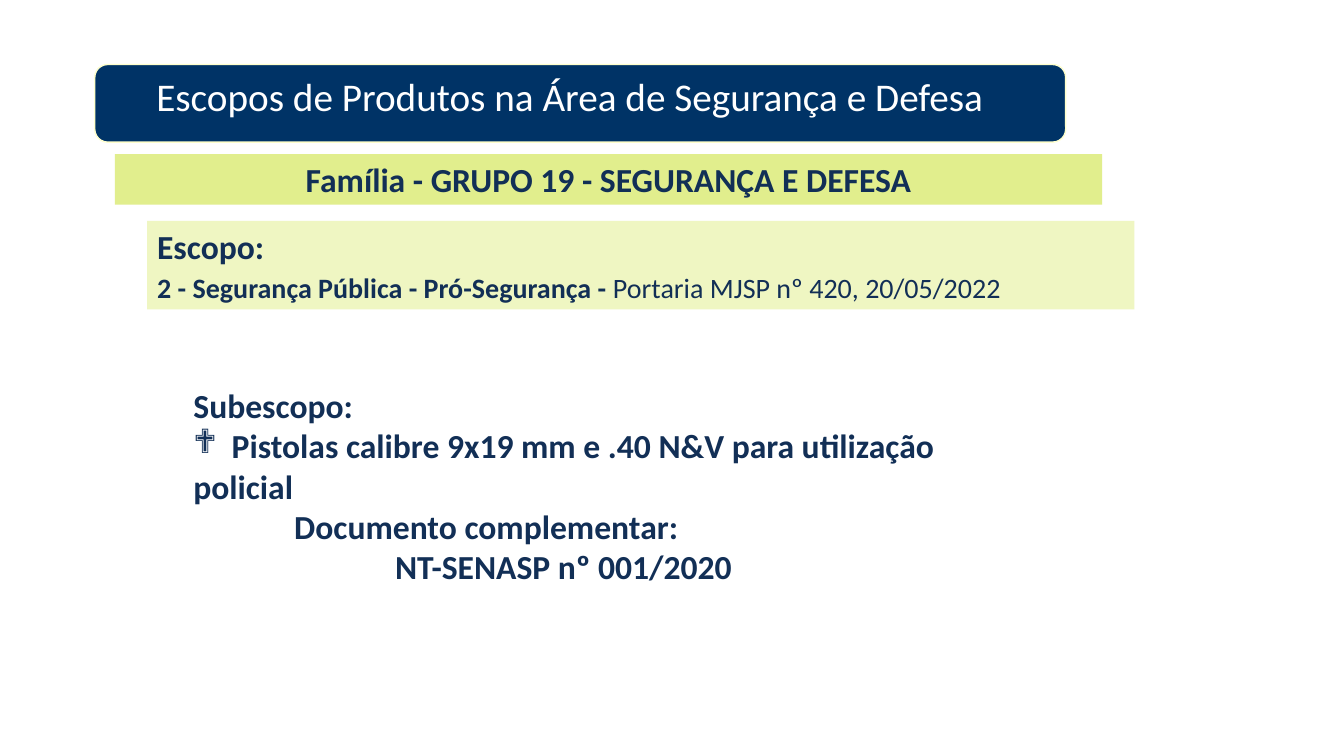
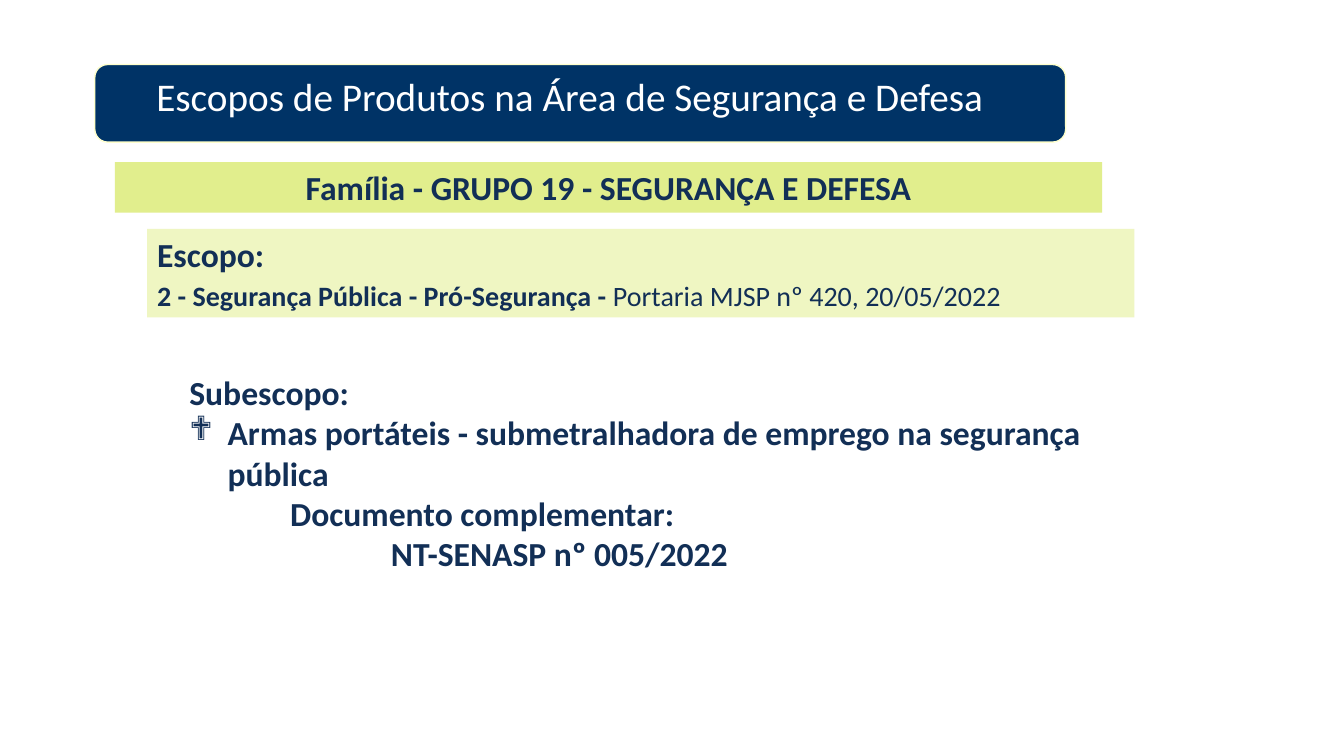
from lxml import etree
from pptx import Presentation
from pptx.dml.color import RGBColor
from pptx.enum.shapes import MSO_SHAPE
from pptx.enum.text import MSO_ANCHOR, PP_ALIGN
from pptx.oxml.ns import qn
from pptx.util import Inches, Pt

COLORS = {"navy": "003366", "border": "FFFFCC", "ink": "122F56",
          "family": "E1EE8D", "scope": "EFF6C2", "white": "FFFFFF"}
FONT = "Calibri"

TITLE = "Escopos de Produtos na Área de Segurança e Defesa"
# A paragraph is a list of (text, size, bold) runs.
FAMILY = [[("Família - GRUPO 19 - SEGURANÇA E DEFESA", 24, True)]]
SCOPE = [
    [("Escopo:", 24, True)],
    [("2 - Segurança Pública - Pró-Segurança - ", 20, True),
     ("Portaria MJSP nº 420, 20/05/2022", 20, False)],
]
# Subscope lines are (style, text).
SLIDES = [
    {"band_top": 1.53, "subscope_at": (1.82, 3.77), "subscope": [
        ("plain", "Subescopo:"),
        ("bullet", "Pistolas calibre 9x19 mm e .40 N&V para utilização"),
        ("plain", "policial"),
        ("document", "Documento complementar:"),
        ("number", "NT-SENASP nº 001/2020")]},
    {"band_top": 1.61, "subscope_at": (1.78, 3.64), "subscope": [
        ("plain", "Subescopo:"),
        ("bullet", "Armas portáteis - submetralhadora de emprego na segurança pública"),
        ("document", "Documento complementar:"),
        ("number", "NT-SENASP nº 005/2022")]},
]
INDENTS = {"plain": (0, 0), "bullet": (0.38, -0.38), "document": (1, 0), "number": (2, 0)}
SUBSCOPE_RIGHT, SUBSCOPE_HEIGHT = 11.25, 2.93
BAND_WIDTH, SCOPE_DROP = 9.79, 0.66


def color(name):
    return RGBColor.from_string(COLORS[name])


def add_filled(shapes, kind, at, fill):
    shape = shapes.add_shape(kind, *map(Inches, at))
    shape.shadow.inherit = False
    shape.fill.solid()
    shape.fill.fore_color.rgb = color(fill)
    shape.line.fill.background()
    return shape


def write(shape, paragraphs, ink="ink", align=PP_ALIGN.LEFT, after=0):
    """Fill a shape with paragraphs of runs, from the top, and return the paragraphs."""
    frame = shape.text_frame
    frame.word_wrap = True
    frame.vertical_anchor = MSO_ANCHOR.TOP
    for index, runs in enumerate(paragraphs):
        para = frame.add_paragraph() if index else frame.paragraphs[0]
        para.alignment = align
        para.space_after = Pt(after)
        for text, size, bold in runs:
            span = para.add_run()
            span.text = text
            span.font.name = FONT
            span.font.size = Pt(size)
            span.font.bold = bold
            span.font.color.rgb = color(ink)
    return frame.paragraphs


def indent(para, style):
    left, first = INDENTS[style]
    properties = para._p.get_or_add_pPr()
    properties.set("marL", str(Inches(left)))
    properties.set("indent", str(Inches(first)))
    if style == "bullet":
        etree.SubElement(properties, qn("a:buFont"), typeface="Wingdings")
        etree.SubElement(properties, qn("a:buChar"), char="❖")


def add_title(page):
    banner = add_filled(page.shapes, MSO_SHAPE.ROUNDED_RECTANGLE, (0.94, 0.64, 9.63, 0.77), "navy")
    banner.line.color.rgb = color("border")
    banner.line.width = Pt(1)
    box = page.shapes.add_textbox(*map(Inches, (0.77, 0.67, 9.76, 0.8)))
    write(box, [[(TITLE, 28, False)]], "white", PP_ALIGN.CENTER)


def add_bands(page, top):
    shapes = page.shapes.add_group_shape().shapes
    scope = add_filled(shapes, MSO_SHAPE.RECTANGLE, (1.46, top + SCOPE_DROP, BAND_WIDTH, 0.88), "scope")
    write(scope, SCOPE, after=3)
    family = add_filled(shapes, MSO_SHAPE.RECTANGLE, (1.14, top, BAND_WIDTH, 0.5), "family")
    write(family, FAMILY, align=PP_ALIGN.CENTER, after=3)


def add_subscope(page, at, lines):
    left, top = at
    box = page.shapes.add_textbox(
        *map(Inches, (left, top, SUBSCOPE_RIGHT - left, SUBSCOPE_HEIGHT)))
    paragraphs = write(box, [[(text, 24, True)] for _, text in lines])
    for para, (style, _) in zip(paragraphs, lines):
        indent(para, style)


def main():
    deck = Presentation()
    deck.slide_width, deck.slide_height = Inches(13.33), Inches(7.5)
    for content in SLIDES:
        page = deck.slides.add_slide(deck.slide_layouts[6])
        add_title(page)
        add_subscope(page, content["subscope_at"], content["subscope"])
        add_bands(page, content["band_top"])
    deck.save("out.pptx")


if __name__ == "__main__":
    main()
